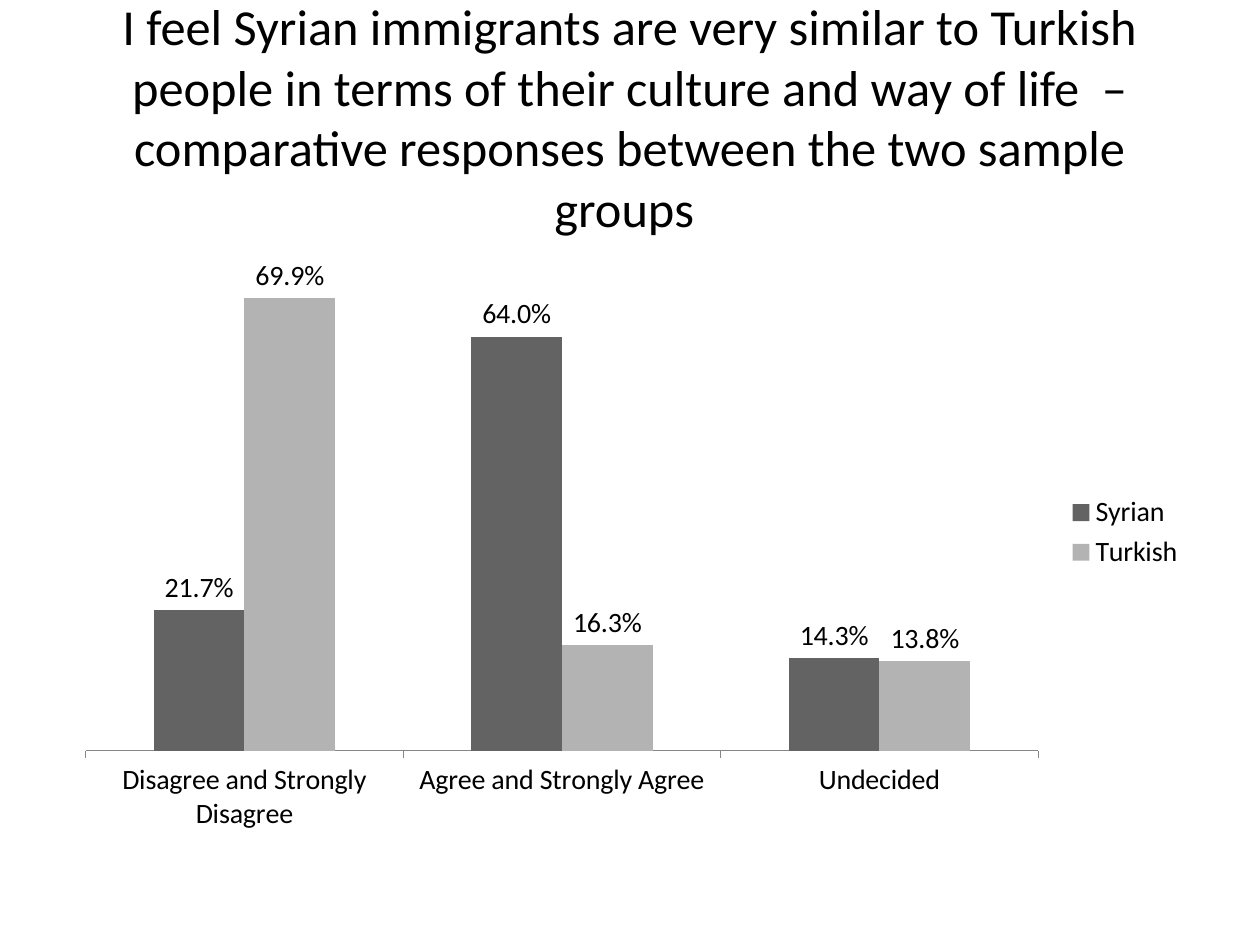
from lxml import etree
from pptx import Presentation
from pptx import util as u
from pptx.chart.data import CategoryChartData
from pptx.dml.color import RGBColor
from pptx.enum import chart as ch, text

BLACK = RGBColor(0x00, 0x00, 0x00)
DARK_GREY = RGBColor(0x63, 0x63, 0x63)
LIGHT_GREY = RGBColor(0xB3, 0xB3, 0xB3)
AXIS_GREY = RGBColor(0x86, 0x86, 0x86)

QUESTION = (
    "I feel Syrian immigrants are very similar to Turkish people in terms of "
    "their culture and way of life  – comparative responses between the two "
    "sample groups "
)
ANSWERS = ["Disagree and Strongly Disagree", "Agree and Strongly Agree", "Undecided"]
GROUPS = {
    "Syrian": ((0.217, 0.640, 0.143), DARK_GREY),
    "Turkish": ((0.699, 0.163, 0.138), LIGHT_GREY),
}
PLOT_AREA = {"x": 0.02, "y": 0.02, "w": 0.84, "h": 0.83}


def apply(target, **values):
    for name, value in values.items():
        setattr(target, name, value)


class SlideBuilder:
    """Holds the text style and the slide being filled."""

    font_name = "Calibri"
    color = BLACK

    def __init__(self, slide):
        self.slide = slide

    def style(self, font, size):
        apply(font, name=self.font_name, size=u.Pt(size), bold=False)
        font.color.rgb = self.color

    def title(self, words, box, size):
        frame = self.slide.shapes.add_textbox(*box).text_frame
        apply(frame, word_wrap=True, auto_size=text.MSO_AUTO_SIZE.NONE,
              vertical_anchor=text.MSO_ANCHOR.MIDDLE)
        paragraph = frame.paragraphs[0]
        paragraph.alignment = text.PP_ALIGN.CENTER
        run = paragraph.add_run()
        run.text = words
        self.style(run.font, size)

    def column_chart(self, answers, groups, box, size):
        data = CategoryChartData(number_format="0.0%")
        data.categories = answers
        for name, (shares, _) in groups.items():
            data.add_series(name, shares)
        chart = self.slide.shapes.add_chart(
            ch.XL_CHART_TYPE.COLUMN_CLUSTERED, *box, data).chart
        apply(chart, has_title=False, has_legend=True)
        self.style(chart.font, size)

        # Legend
        apply(chart.legend, position=ch.XL_LEGEND_POSITION.RIGHT,
              include_in_layout=False)
        self.style(chart.legend.font, size)

        # Axes
        apply(chart.value_axis, visible=False, has_major_gridlines=False,
              minimum_scale=0, maximum_scale=0.8)
        answer_axis = chart.category_axis
        apply(answer_axis, has_major_gridlines=False,
              major_tick_mark=ch.XL_TICK_MARK.OUTSIDE)
        answer_axis.format.line.color.rgb = AXIS_GREY
        self.style(answer_axis.tick_labels.font, size)

        # Columns and their labels
        columns = chart.plots[0]
        apply(columns, gap_width=150, overlap=0, vary_by_categories=False)
        for series, (_, fill) in zip(columns.series, groups.values()):
            series.format.fill.solid()
            series.format.fill.fore_color.rgb = fill
            labels = series.data_labels
            apply(labels, show_value=True, number_format="0.0%",
                  number_format_is_linked=False,
                  position=ch.XL_LABEL_POSITION.OUTSIDE_END)
            self.style(labels.font, size)
        self.place_plot(chart)

    def place_plot(self, chart):
        plot_area = chart.element.chart.plotArea
        namespace = etree.QName(plot_area).namespace
        for old in plot_area.findall(f"{{{namespace}}}layout"):
            plot_area.remove(old)
        layout = etree.Element(f"{{{namespace}}}layout")
        manual = etree.SubElement(layout, f"{{{namespace}}}manualLayout")
        settings = {"layoutTarget": "inner", "xMode": "edge", "yMode": "edge",
                    **PLOT_AREA}
        for name, value in settings.items():
            etree.SubElement(manual, f"{{{namespace}}}{name}", val=str(value))
        plot_area.insert(0, layout)


def main():
    deck = Presentation()
    apply(deck, slide_width=u.Cm(25.4), slide_height=u.Cm(19.05))
    builder = SlideBuilder(deck.slides.add_slide(deck.slide_layouts[6]))
    left, width = u.Cm(1.27), u.Cm(22.86)

    # Question
    builder.title(QUESTION, (left, u.Cm(0.76), width, u.Cm(3.18)), 28.8)

    # Responses of both groups
    builder.column_chart(ANSWERS, GROUPS,
                         (left, u.Cm(4.45), width, u.Cm(12.57)), 16)
    deck.save("out.pptx")


if __name__ == "__main__":
    main()
